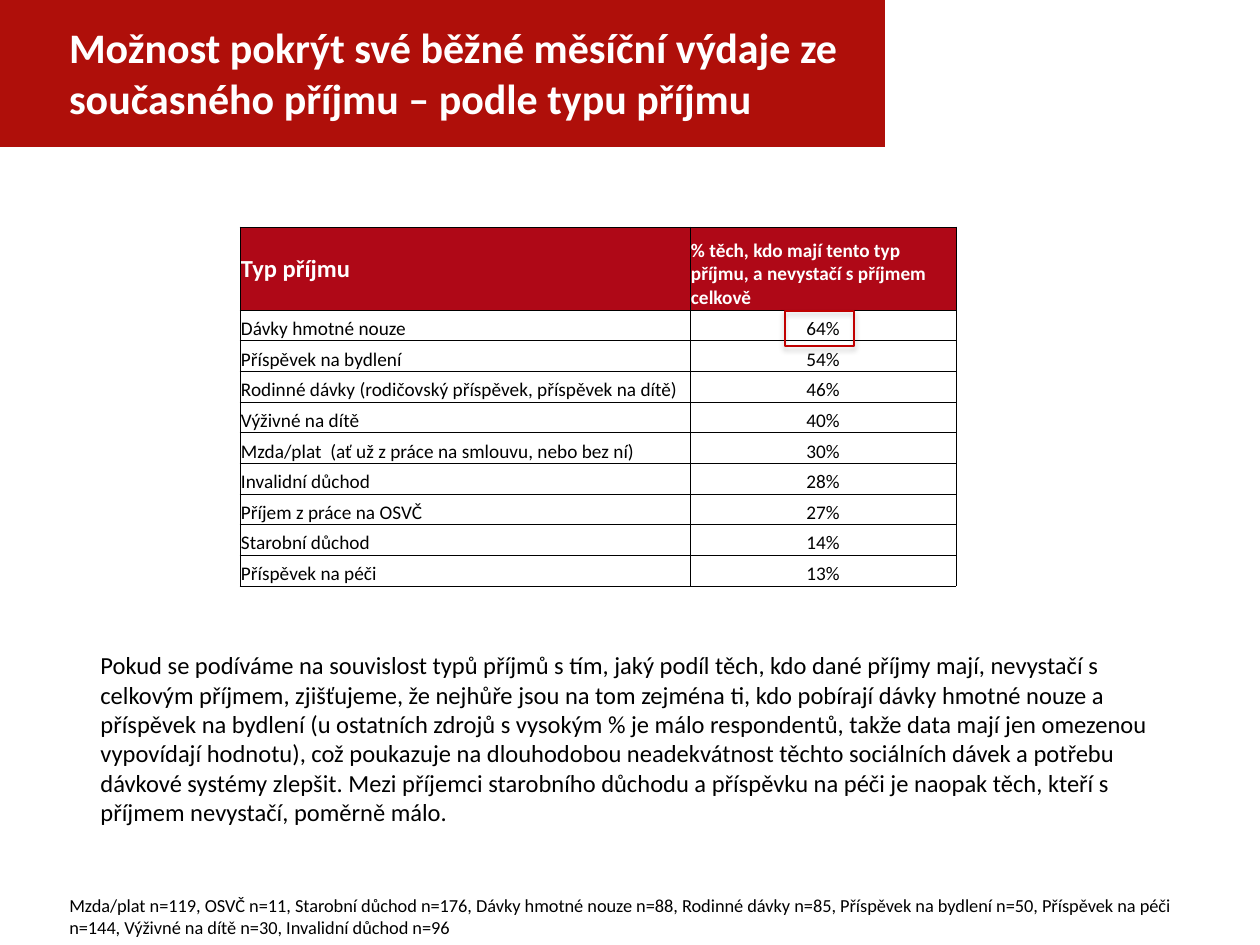
from typing import NamedTuple

from lxml.etree import SubElement as Sub
from pptx import Presentation
from pptx.dml.color import RGBColor
from pptx.enum.shapes import MSO_SHAPE as Kind
from pptx.enum.text import MSO_ANCHOR as Anchor, MSO_AUTO_SIZE as Fit, PP_ALIGN as Align
from pptx.oxml.ns import qn
from pptx.util import Pt

UNIT = 914400 / 126
SIDES = ("left", "top", "right", "bottom")
DARK, WHITE = "000000", "FFFFFF"


class Box(NamedTuple):
    x: int
    y: int
    w: int
    h: int


class Note(NamedTuple):
    box: Box
    size: float
    text: str


class Row(NamedTuple):
    name: str
    share: str


HEAD = Row("Typ příjmu", "% těch, kdo mají tento typ příjmu, a nevystačí s příjmem celkově")
ROWS = [
    Row("Dávky hmotné nouze", "64%"),
    Row("Příspěvek na bydlení", "54%"),
    Row("Rodinné dávky (rodičovský příspěvek, příspěvek na dítě)", "46%"),
    Row("Výživné na dítě", "40%"),
    Row("Mzda/plat  (ať už z práce na smlouvu, nebo bez ní)", "30%"),
    Row("Invalidní důchod", "28%"),
    Row("Příjem z práce na OSVČ", "27%"),
    Row("Starobní důchod", "14%"),
    Row("Příspěvek na péči", "13%"),
]
NOTES = [
    Note(Box(57, 888, 1134, 57), 10.5,
         "Mzda/plat n=119, OSVČ n=11, Starobní důchod n=176, Dávky hmotné nouze n=88, "
         "Rodinné dávky n=85, Příspěvek na bydlení n=50, Příspěvek na péči n=144, "
         "Výživné na dítě n=30, Invalidní důchod n=96"),
    Note(Box(88, 644, 1118, 190), 14,
         "Pokud se podíváme na souvislost typů příjmů s tím, jaký podíl těch, kdo dané "
         "příjmy mají, nevystačí s celkovým příjmem, zjišťujeme, že nejhůře jsou na tom "
         "zejména ti, kdo pobírají dávky hmotné nouze a příspěvek na bydlení (u ostatních "
         "zdrojů s vysokým % je málo respondentů, takže data mají jen omezenou vypovídají "
         "hodnotu), což poukazuje na dlouhodobou neadekvátnost těchto sociálních dávek a "
         "potřebu dávkové systémy zlepšit. Mezi příjemci starobního důchodu a příspěvku na "
         "péči je naopak těch, kteří s příjmem nevystačí, poměrně málo."),
]


def px(num: float) -> int:
    """Turn px into EMU."""
    return round(num * UNIT)


def tint(code: str) -> RGBColor:
    """Turn a hex string into a colour."""
    return RGBColor.from_string(code)


def span(box: Box) -> list[int]:
    """Give a box in EMU."""
    return [px(num) for num in box]


def apply(item, **vals) -> None:
    """Set each given attribute on an item."""
    for key, val in vals.items():
        setattr(item, key, val)


def pad(item, *gaps: int) -> None:
    """Set left, top, right and bottom margins in px."""
    apply(item, **{f"margin_{side}": px(gap) for side, gap in zip(SIDES, gaps)})


def write(frame, text: str, size: float, code: str = DARK, bold: bool = False,
          align=Align.LEFT) -> None:
    """Write one styled paragraph."""
    frame.text = text
    para = frame.paragraphs[0]
    para.alignment = align
    apply(para.font, name="Calibri", size=Pt(size), bold=bold)
    para.font.color.rgb = tint(code)


def draw_title(slide, box: Box, text: str) -> None:
    """Format the title as a red banner."""
    head = slide.shapes.title
    apply(head, **dict(zip(("left", "top", "width", "height"), span(box))))
    head.fill.solid()
    head.fill.fore_color.rgb = tint("AF0F0A")
    frame = head.text_frame
    apply(frame, word_wrap=True, auto_size=Fit.NONE, vertical_anchor=Anchor.MIDDLE)
    pad(frame, 69, 6, 13, 6)
    write(frame, text, 24, WHITE, True)


def draw_note(slide, note: Note) -> None:
    """Add a wrapped text box."""
    frame = slide.shapes.add_textbox(*span(note.box)).text_frame
    apply(frame, word_wrap=True, auto_size=Fit.SHAPE_TO_FIT_TEXT)
    write(frame, note.text, note.size)


def edge(cell) -> None:
    """Draw thin black borders round a cell."""
    props = cell._tc.get_or_add_tcPr()
    for side in "LRTB":
        line = Sub(props, qn(f"a:ln{side}"), w=str(Pt(0.5)))
        Sub(Sub(line, qn("a:solidFill")), qn("a:srgbClr"), val=DARK)


def draw_cell(cell, text: str, size: float, head: bool, anchor, align) -> None:
    """Fill one table cell."""
    edge(cell)
    if head:
        cell.fill.solid()
        cell.fill.fore_color.rgb = tint("AF0817")
    else:
        cell.fill.background()
    pad(cell, 1, 1, 1, 0)
    cell.vertical_anchor = anchor
    write(cell.text_frame, text, size, WHITE if head else DARK, head, align)


def draw_table(slide, box: Box, top: int) -> None:
    """Add the table of income types and shares."""
    table = slide.shapes.add_table(len(ROWS) + 1, 2, *span(box)).table
    apply(table, first_row=False, horz_banding=False)
    for col, wide in zip(table.columns, (450, 266)):
        col.width = px(wide)
    for num, row in enumerate([HEAD, *ROWS]):
        head = num == 0
        table.rows[num].height = px(top if head else (box.h - top) / len(ROWS))
        left, right = table.rows[num].cells
        draw_cell(left, row.name, 14 if head else 11, head,
                  Anchor.MIDDLE if head else Anchor.BOTTOM, Align.LEFT)
        draw_cell(right, row.share, 11, head, Anchor.BOTTOM,
                  Align.LEFT if head else Align.CENTER)


def draw_mark(slide, box: Box) -> None:
    """Add the red frame with a soft shadow."""
    mark = slide.shapes.add_shape(Kind.RECTANGLE, *span(box))
    mark.fill.background()
    mark.line.color.rgb = tint("C00000")
    mark.line.width = Pt(0.75)
    mark.shadow.inherit = False
    glow = Sub(mark._element.spPr.find(qn("a:effectLst")), qn("a:outerShdw"),
               blurRad=str(Pt(3.1)), dist=str(Pt(1.8)), dir="5400000", rotWithShape="0")
    Sub(Sub(glow, qn("a:srgbClr"), val=DARK), qn("a:alpha"), val="35000")


def main() -> None:
    """Build and save the slide."""
    deck = Presentation()
    apply(deck, slide_width=px(1260), slide_height=px(945))
    slide = deck.slides.add_slide(deck.slide_layouts[5])
    draw_title(slide, Box(0, -3, 885, 150),
               "Možnost pokrýt své běžné měsíční výdaje ze současného příjmu – podle typu příjmu")
    for note in NOTES:
        draw_note(slide, note)
    draw_table(slide, Box(240, 227, 716, 359), 83)
    draw_mark(slide, Box(785, 311, 69, 35))
    deck.save("out.pptx")


if __name__ == "__main__":
    main()
